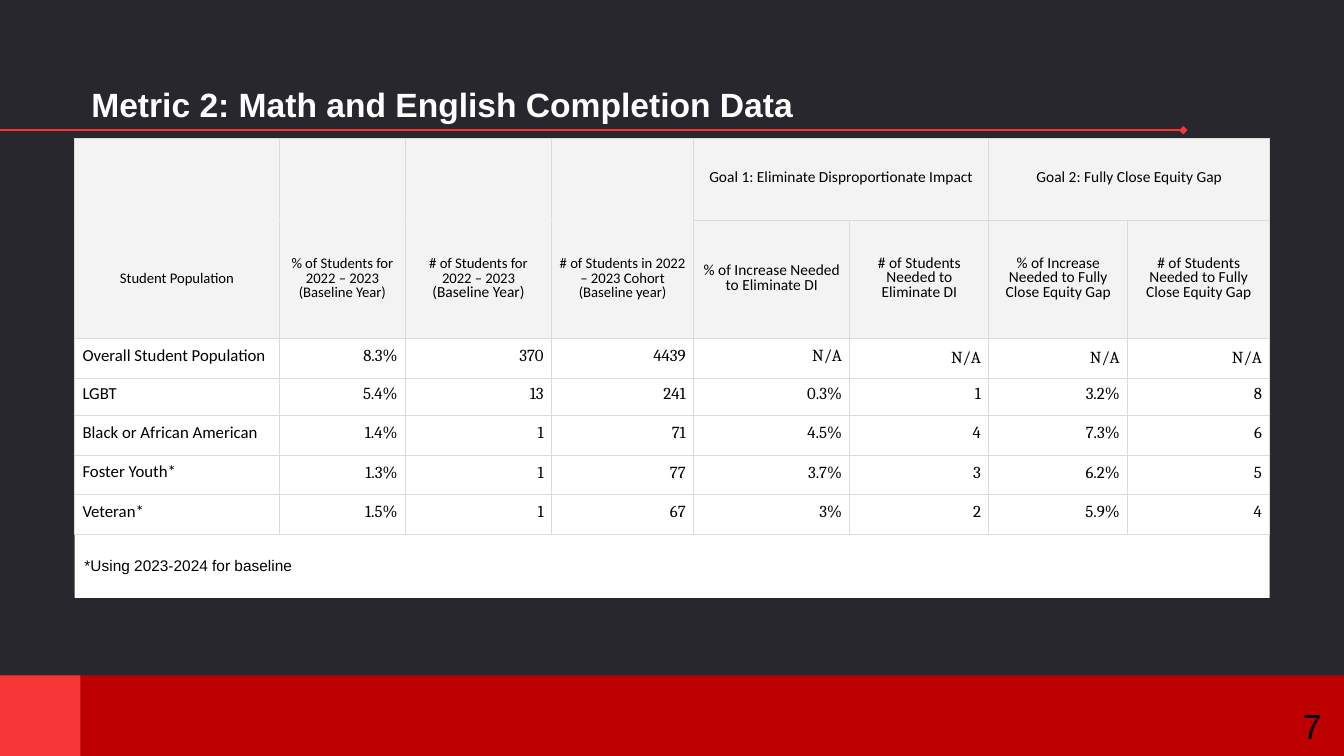
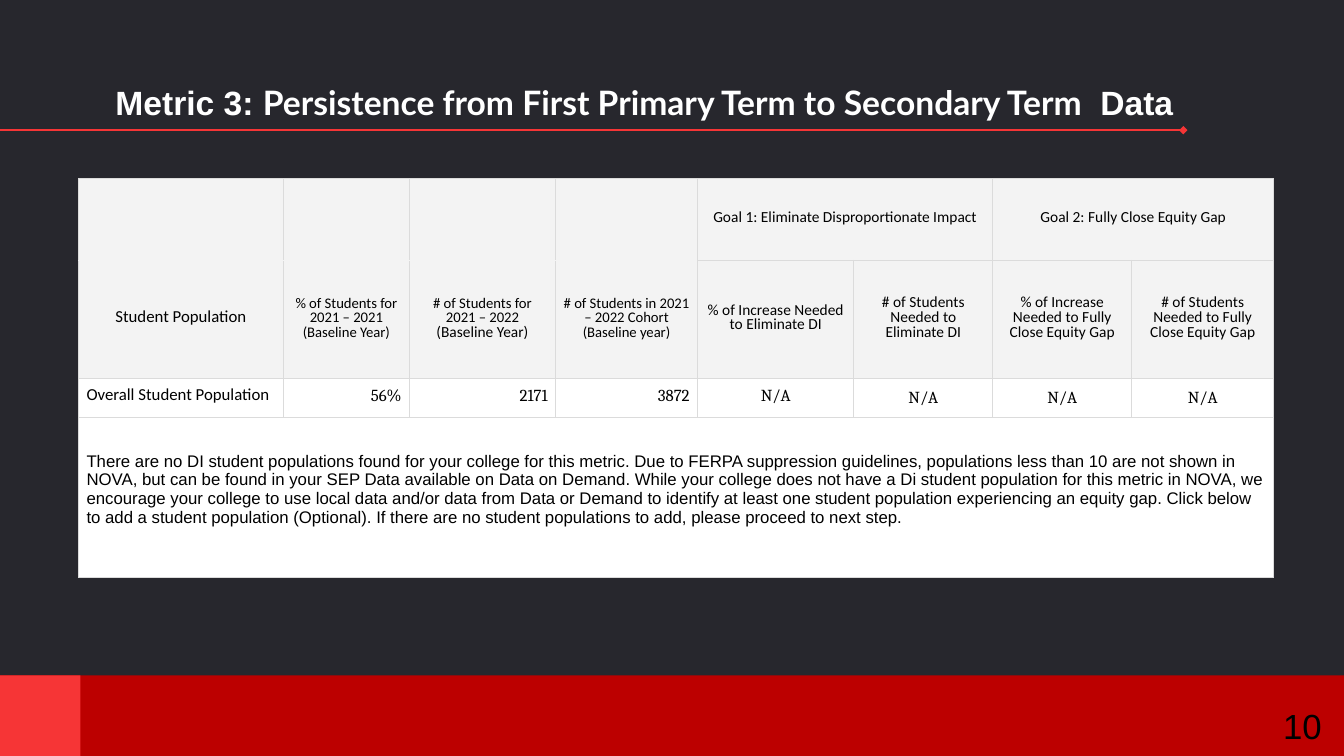
from dataclasses import dataclass
from typing import Optional

import lxml.etree
import pptx
import pptx.dml.color
import pptx.enum.shapes
import pptx.enum.text
import pptx.oxml.ns
import pptx.util

Cm = pptx.util.Cm
Pt = pptx.util.Pt
ALIGN = pptx.enum.text.PP_ALIGN
ANCHOR = pptx.enum.text.MSO_ANCHOR
qualified = pptx.oxml.ns.qn

# Shared look
BACKGROUND = "27272D"
BAND = "BC0000"
ACCENT = "F63536"
WHITE = "FFFFFF"
BLACK = "000000"
HEADER_FILL = "F3F3F3"
GRID = "DBDBDB"
SLIDE_WIDTH, SLIDE_HEIGHT = 33.87, 19.05
BAND_HEIGHT = 2.03
BAND_TOP = SLIDE_HEIGHT - BAND_HEIGHT
COLUMN_WIDTHS = (5.16, 3.18, 3.68, 3.58, 3.94, 3.5, 3.5, 3.58)
TABLE_WIDTH = sum(COLUMN_WIDTHS)
GROUP_ROW, HEADER_ROW = 2.06, 2.97
GOAL_COLUMN = 4  # the first column that belongs to a goal
GOALS = ("Goal 1: Eliminate Disproportionate Impact", "Goal 2: Fully Close Equity Gap")
GOAL_HEADERS = (
    "% of Increase Needed to Eliminate DI",
    "# of Students Needed to Eliminate DI",
    "% of Increase Needed to Fully Close Equity Gap",
    "# of Students Needed to Fully Close Equity Gap",
)


@dataclass(frozen=True)
class Box:
    left: float
    top: float
    width: float
    height: float

    def lengths(self) -> tuple:
        return Cm(self.left), Cm(self.top), Cm(self.width), Cm(self.height)


# The page number stands wholly inside the bottom band
NUMBER_BOX = Box(31.6, BAND_TOP, 2.27, BAND_HEIGHT)


@dataclass(frozen=True)
class Line:
    text: str
    size: float
    font: str = "Calibri"


@dataclass(frozen=True)
class DataRow:
    height: float
    values: tuple


@dataclass(frozen=True)
class MetricSlide:
    title: tuple
    title_box: Box
    number: str
    table_left: float
    table_top: float
    population_size: float
    percent_years: str
    count_years: str
    rows: tuple
    missing_alignment: ALIGN
    footnote: Optional[str] = None
    closing_note: Optional[str] = None


def color(value: str) -> pptx.dml.color.RGBColor:
    return pptx.dml.color.RGBColor.from_string(value)


def style_run(run, size: float, font: str, hex_color: str, bold: bool = False) -> None:
    run.font.size = Pt(size)
    run.font.name = font
    run.font.bold = bold
    run.font.color.rgb = color(hex_color)


def set_margins(frame, margin: float) -> None:
    frame.margin_left = frame.margin_right = Cm(margin)
    frame.margin_top = frame.margin_bottom = Cm(margin)


def add_rectangle(slide, box: Box, fill: str):
    shape = slide.shapes.add_shape(pptx.enum.shapes.MSO_SHAPE.RECTANGLE, *box.lengths())
    shape.shadow.inherit = False
    shape.fill.solid()
    shape.fill.fore_color.rgb = color(fill)
    shape.line.fill.background()
    return shape


def add_title_rule(slide):
    rule = slide.shapes.add_connector(
        pptx.enum.shapes.MSO_CONNECTOR.STRAIGHT, Cm(0), Cm(3.28), Cm(29.82), Cm(3.28)
    )
    rule.line.color.rgb = color(ACCENT)
    rule.line.width = Pt(1.5)
    properties = rule.element.spPr
    outline = properties.find(qualified("a:ln"))
    lxml.etree.SubElement(outline, qualified("a:tailEnd"), type="diamond")
    lxml.etree.SubElement(properties, qualified("a:effectLst"))
    return rule


def decorate_layout(layout, slide) -> None:
    """Draw the rule and bands once, then hand them to the shared layout."""
    layout.background.fill.solid()
    layout.background.fill.fore_color.rgb = color(BACKGROUND)
    for placeholder in list(layout.placeholders):
        if placeholder.placeholder_format.idx != 0:
            layout.shapes.element.remove(placeholder.element)
    parts = (
        add_title_rule(slide),
        add_rectangle(slide, Box(0, BAND_TOP, SLIDE_WIDTH, BAND_HEIGHT), BAND),
        add_rectangle(slide, Box(0, BAND_TOP, BAND_HEIGHT, BAND_HEIGHT), ACCENT),
    )
    for part in parts:
        layout.shapes.element.append(part.element)


def fill_title(slide, metric: MetricSlide) -> None:
    title = slide.shapes.title
    title.left, title.top, title.width, title.height = metric.title_box.lengths()
    frame = title.text_frame
    frame.word_wrap = True
    frame.auto_size = pptx.enum.text.MSO_AUTO_SIZE.NONE
    frame.vertical_anchor = ANCHOR.BOTTOM
    set_margins(frame, 0.25)
    paragraph = frame.paragraphs[0]
    paragraph.alignment = ALIGN.LEFT
    for line in metric.title:
        run = paragraph.add_run()
        run.text = line.text
        style_run(run, line.size, line.font, WHITE, bold=True)


def add_page_number(slide, number: str) -> None:
    frame = slide.shapes.add_textbox(*NUMBER_BOX.lengths()).text_frame
    frame.word_wrap = True
    frame.vertical_anchor = ANCHOR.BOTTOM
    set_margins(frame, 0.25)
    frame.margin_right = Cm(0.56)
    frame.text = number
    frame.paragraphs[0].alignment = ALIGN.RIGHT
    style_run(frame.paragraphs[0].runs[0], 24.9, "Arial", BLACK)


def add_footnote(slide, metric: MetricSlide) -> None:
    shape = add_rectangle(slide, Box(metric.table_left, 13.4, TABLE_WIDTH, 1.67), WHITE)
    frame = shape.text_frame
    frame.word_wrap = True
    frame.vertical_anchor = ANCHOR.MIDDLE
    set_margins(frame, 0.25)
    frame.text = metric.footnote
    frame.paragraphs[0].alignment = ALIGN.LEFT
    style_run(frame.paragraphs[0].runs[0], 11, "Arial", BLACK)


def format_cell(cell, fill: str, top: str = GRID, bottom: str = GRID) -> None:
    """Set borders, fill and margins."""
    properties = cell._tc.get_or_add_tcPr()
    for side, hex_color in (("L", GRID), ("R", GRID), ("T", top), ("B", bottom)):
        border = lxml.etree.SubElement(properties, qualified(f"a:ln{side}"), w=str(Pt(0.82)))
        solid = lxml.etree.SubElement(border, qualified("a:solidFill"))
        lxml.etree.SubElement(solid, qualified("a:srgbClr"), val=hex_color)
    cell.fill.solid()
    cell.fill.fore_color.rgb = color(fill)
    cell.vertical_anchor = ANCHOR.MIDDLE
    cell.margin_left = cell.margin_right = Cm(0.2)
    cell.margin_top = cell.margin_bottom = Cm(0.1)


def write_cell(cell, lines: tuple, alignment: ALIGN, spacing: Optional[float] = 10.5) -> None:
    cell.text_frame.text = "\n".join(line.text for line in lines)
    for paragraph, line in zip(cell.text_frame.paragraphs, lines):
        paragraph.alignment = alignment
        if spacing is not None:
            paragraph.line_spacing = Pt(spacing)
        style_run(paragraph.runs[0], line.size, line.font, BLACK)


def header_lines(metric: MetricSlide) -> tuple:
    baseline = (
        (Line("Student Population", metric.population_size),),
        (Line(f"% of Students for {metric.percent_years} (Baseline Year)", 10.5),),
        (Line(f"# of Students for {metric.count_years}", 10.5), Line("(Baseline Year)", 11)),
        (Line(f"# of Students in {metric.count_years} Cohort", 10.5), Line("(Baseline year)", 10.5)),
    )
    return baseline + tuple((Line(text, 11),) for text in GOAL_HEADERS)


def add_metric_table(slide, metric: MetricSlide) -> None:
    heights = [GROUP_ROW, HEADER_ROW] + [row.height for row in metric.rows]
    if metric.closing_note:
        heights.append(4.01)
    box = Box(metric.table_left, metric.table_top, TABLE_WIDTH, sum(heights))
    table = slide.shapes.add_table(len(heights), len(COLUMN_WIDTHS), *box.lengths()).table
    table.first_row = table.horz_banding = False
    for column, width in zip(table.columns, COLUMN_WIDTHS):
        column.width = Cm(width)
    for row, height in zip(table.rows, heights):
        row.height = Cm(height)

    # Heading rows: the baseline columns read as one tall cell
    for index, lines in enumerate(header_lines(metric)):
        seam = HEADER_FILL if index < GOAL_COLUMN else GRID
        format_cell(table.cell(0, index), HEADER_FILL, bottom=seam)
        format_cell(table.cell(1, index), HEADER_FILL, top=seam)
        write_cell(table.cell(1, index), lines, ALIGN.CENTER)
    for index, goal in enumerate(GOALS):
        first = GOAL_COLUMN + 2 * index
        table.cell(0, first).merge(table.cell(0, first + 1))
        write_cell(table.cell(0, first), (Line(goal, 11),), ALIGN.CENTER)

    # Data rows
    for row_index, row in enumerate(metric.rows, start=2):
        for index, value in enumerate(row.values):
            cell = table.cell(row_index, index)
            missing = value == "N/A"
            alignment = metric.missing_alignment if missing else ALIGN.RIGHT
            if index == 0:
                alignment = ALIGN.LEFT
            font = "Calibri" if index == 0 else "Cambria"
            spacing = None if missing and index > GOAL_COLUMN else 10.5
            format_cell(cell, WHITE)
            write_cell(cell, (Line(value, 12, font),), alignment, spacing)

    # Closing note across the full width, slightly above the middle
    if metric.closing_note:
        last = len(heights) - 1
        for index in range(len(COLUMN_WIDTHS)):
            format_cell(table.cell(last, index), WHITE)
        note = table.cell(last, 0)
        note.merge(table.cell(last, len(COLUMN_WIDTHS) - 1))
        note.margin_bottom = Cm(0.5)
        write_cell(note, (Line(metric.closing_note, 12, "Arial"),), ALIGN.LEFT, None)


METRICS = (
    MetricSlide(
        title=(Line("Metric 2: Math and English Completion Data", 24, "Arial"),),
        title_box=Box(2.05, 1.35, 27.76, 2.03),
        number="7",
        table_left=1.88,
        table_top=3.5,
        population_size=10.5,
        percent_years="2022 – 2023",
        count_years="2022 – 2023",
        rows=(
            DataRow(1.0, ("Overall Student Population", "8.3%", "370", "4439", "N/A", "N/A", "N/A", "N/A")),
            DataRow(0.94, ("LGBT", "5.4%", "13", "241", "0.3%", "1", "3.2%", "8")),
            DataRow(1.0, ("Black or African American", "1.4%", "1", "71", "4.5%", "4", "7.3%", "6")),
            DataRow(1.0, ("Foster Youth*", "1.3%", "1", "77", "3.7%", "3", "6.2%", "5")),
            DataRow(1.0, ("Veteran*", "1.5%", "1", "67", "3%", "2", "5.9%", "4")),
        ),
        missing_alignment=ALIGN.RIGHT,
        footnote="*Using 2023-2024 for baseline",
    ),
    MetricSlide(
        title=(
            Line("Metric 3: ", 24, "Arial"),
            Line("Persistence from First Primary Term to Secondary Term", 24, "Lato"),
            Line("  Data", 24, "Arial"),
        ),
        title_box=Box(2.66, 1.31, 28.75, 2.03),
        number="10",
        table_left=1.98,
        table_top=4.5,
        population_size=12,
        percent_years="2021 – 2021",
        count_years="2021 – 2022",
        rows=(DataRow(1.0, ("Overall Student Population", "56%", "2171", "3872", "N/A", "N/A", "N/A", "N/A")),),
        missing_alignment=ALIGN.CENTER,
        closing_note=(
            "There are no DI student populations found for your college for this metric. "
            "Due to FERPA suppression guidelines, populations less than 10 are not shown in NOVA, "
            "but can be found in your SEP Data available on Data on Demand. While your college does "
            "not have a Di student population for this metric in NOVA, we encourage your college to "
            "use local data and/or data from Data or Demand to identify at least one student "
            "population experiencing an equity gap. Click below to add a student population "
            "(Optional). If there are no student populations to add, please proceed to next step."
        ),
    ),
)


def main() -> None:
    presentation = pptx.Presentation()
    presentation.slide_width = Cm(SLIDE_WIDTH)
    presentation.slide_height = Cm(SLIDE_HEIGHT)
    layout = presentation.slide_layouts[5]
    for index, metric in enumerate(METRICS):
        slide = presentation.slides.add_slide(layout)
        if index == 0:
            decorate_layout(layout, slide)
        if metric.footnote:
            add_footnote(slide, metric)
        fill_title(slide, metric)
        add_page_number(slide, metric.number)
        add_metric_table(slide, metric)
    presentation.save("out.pptx")


if __name__ == "__main__":
    main()
